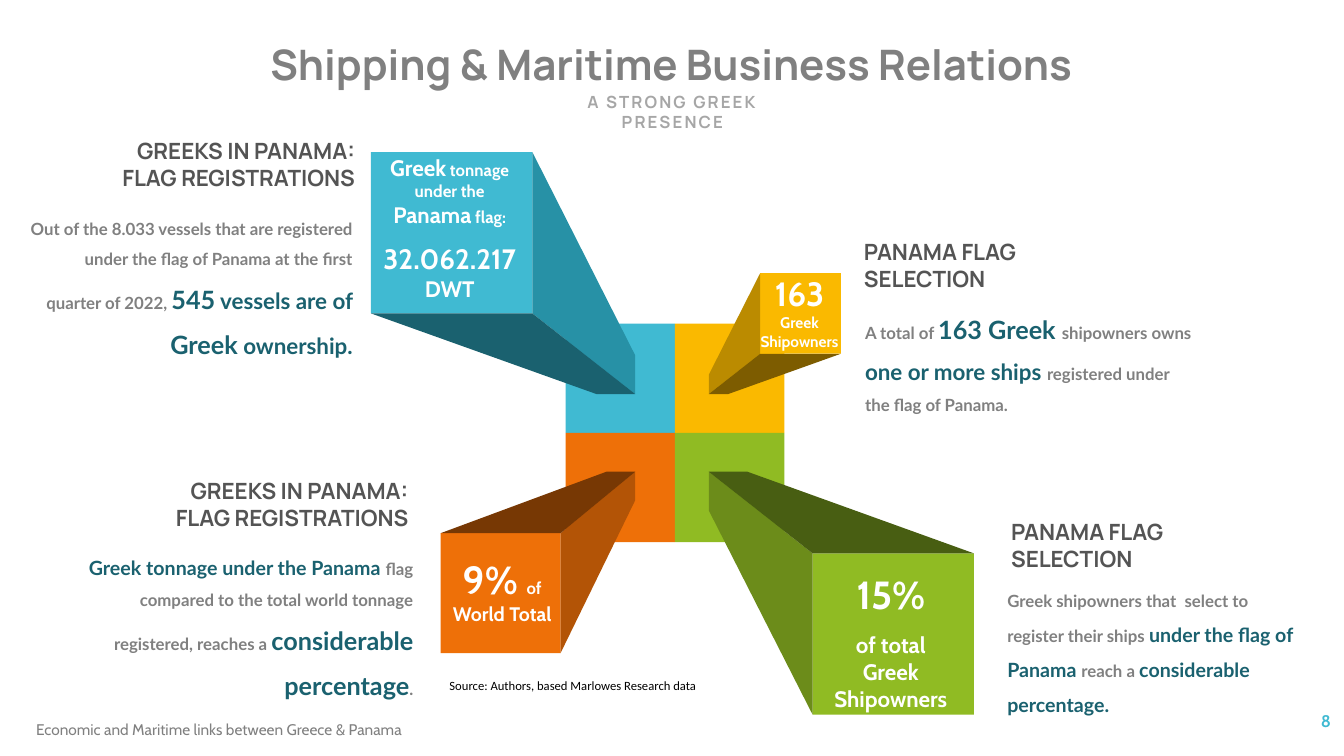
"""Build the slide on shipping and maritime business relations."""
from pptx import Presentation
from pptx.dml.color import RGBColor
from pptx.enum import shapes, text
from pptx.util import Inches, Pt

COLORS = {
    "blue": "40BAD2", "blue side": "2791A6", "blue base": "1A616F",
    "yellow": "FAB900", "yellow side": "BB8B00", "yellow base": "7D5C00",
    "orange": "EE7008", "orange side": "B35406", "orange base": "773804",
    "green": "90BB23", "green side": "6C8C1A", "green base": "485E12",
    "heading": "545454", "gray": "808080", "pale": "A6A6A6",
    "teal": "1A616F", "white": "FFFFFF", "black": "000000",
}
LEFT, CENTER, RIGHT = text.PP_ALIGN.LEFT, text.PP_ALIGN.CENTER, text.PP_ALIGN.RIGHT
TOP, MIDDLE = text.MSO_ANCHOR.TOP, text.MSO_ANCHOR.MIDDLE


def paint(shape, color):
    """Give a shape a plain fill with no line or shadow."""
    shape.shadow.inherit = False
    shape.fill.solid()
    shape.fill.fore_color.rgb = RGBColor.from_string(COLORS[color])
    shape.line.fill.background()


def write(box, paras, font, align=LEFT, anchor=TOP, inset=(0.1, 0.05), bold=True,
          spacing=1.0, before=(0,)):
    """Fill a box with paragraphs of (text, size, color) runs."""
    frame = box.text_frame
    frame.word_wrap = True
    frame.auto_size = text.MSO_AUTO_SIZE.NONE
    frame.vertical_anchor = anchor
    frame.margin_left = frame.margin_right = Inches(inset[0])
    frame.margin_top = frame.margin_bottom = Inches(inset[1])
    for index, runs in enumerate(paras):
        para = frame.add_paragraph() if index else frame.paragraphs[0]
        para.alignment = align
        para.line_spacing = spacing
        para.space_before = Pt(before[index] if index < len(before) else 0)
        for words, size, color in runs:
            span = para.add_run()
            span.text = words
            span.font.size = Pt(size)
            span.font.name = font
            span.font.bold = bold
            span.font.color.rgb = RGBColor.from_string(COLORS[color])


deck = Presentation()
deck.slide_width, deck.slide_height = Inches(13.33), Inches(7.5)
page = deck.slides.add_slide(deck.slide_layouts[5])

title = page.shapes.title
title.left, title.top, title.width, title.height = map(Inches, (2.28, 0.33, 8.76, 0.61))
write(title, [[("Shipping & Maritime Business Relations", 30, "gray")]], "Manrope", CENTER)

subtitle = page.shapes.add_textbox(*map(Inches, (5.57, 0.86, 2.2, 0.5)))
write(subtitle, [[("A STRONG GREEK PRESENCE", 12, "pale")]], "Manrope", CENTER)
for span in subtitle.text_frame.paragraphs[0].runs:
    span.font._element.set("spc", "150")

TILE = 1.085
CORE_LEFT, CORE_TOP = 5.61, 3.21
tiles = [("blue", 0, 0), ("yellow", 1, 0), ("orange", 0, 1), ("green", 1, 1)]
for color, column, row in tiles:
    tile = page.shapes.add_shape(
        shapes.MSO_SHAPE.RECTANGLE, Inches(CORE_LEFT + column * TILE),
        Inches(CORE_TOP + row * TILE), Inches(TILE), Inches(TILE))
    paint(tile, color)

blocks = {"yellow": (7.54, 2.71, 0.8), "orange": (4.37, 5.29, 1.19),
          "green": (8.06, 5.49, 1.6), "blue": (3.68, 1.51, 1.6)}
places = {color: (column, row) for color, column, row in tiles}
for color, (left, top, size) in blocks.items():
    column, row = places[color]
    near_x, far_x = (left, left + size) if column else (left + size, left)
    near_y, far_y = (top, top + size) if row else (top + size, top)
    tip_x, tip_y = (6.3, 7.03)[column], (3.91, 4.68)[row]
    depth = 0.24 * size
    back_x = tip_x + depth * (2 * column - 1)
    back_y = tip_y + depth * (2 * row - 1)
    faces = {
        "side": [(near_x, far_y), (tip_x, back_y), (tip_x, tip_y), (near_x, near_y)],
        "base": [(near_x, near_y), (tip_x, tip_y), (back_x, tip_y), (far_x, near_y)],
    }
    front = page.shapes.add_shape(
        shapes.MSO_SHAPE.RECTANGLE, *map(Inches, (left, top, size, size)))
    paint(front, color)
    for face, points in faces.items():
        corners = [(Inches(x), Inches(y)) for x, y in points]
        builder = page.shapes.build_freeform(*corners[0])
        builder.add_line_segments(corners[1:], close=True)
        paint(builder.convert_to_shape(), f"{color} {face}")

headings = [
    ((9.93, 5.09, 1.87, 0.64), LEFT, "PANAMA FLAG", "SELECTION"),
    ((8.47, 2.31, 1.87, 0.64), LEFT, "PANAMA FLAG", "SELECTION"),
    ((1.46, 4.68, 2.69, 0.64), RIGHT, "GREEKS IN PANAMA:", "FLAG REGISTRATIONS"),
    ((0.93, 1.31, 2.69, 0.64), RIGHT, "GREEKS IN PANAMA:", "FLAG REGISTRATIONS"),
]
for place, align, *lines in headings:
    box = page.shapes.add_textbox(*map(Inches, place))
    write(box, [[(line, 16, "heading")] for line in lines], "Manrope", align, MIDDLE)

stories = [
    ((9.94, 5.73, 3.09, 1.01), LEFT, [
        ("Greek shipowners that  select to register their ships ", 12, "gray"),
        ("under the flag of Panama ", 14, "teal"), ("reach a ", 12, "gray"),
        ("considerable percentage.", 14, "teal")]),
    ((8.53, 2.94, 3.35, 1.17), LEFT, [
        ("A total of ", 12, "gray"), ("163 Greek ", 18, "teal"),
        ("shipowners owns ", 12, "gray"), ("one or more ships ", 16, "teal"),
        ("registered under the flag of Panama.", 12, "gray")]),
    ((0.53, 5.37, 3.62, 1.1), RIGHT, [
        ("Greek tonnage under the Panama ", 14, "teal"),
        ("flag compared to the total world tonnage registered, reaches a ", 12, "gray"),
        ("considerable", 18, "teal"), (" ", 16, "teal"), ("percentage", 18, "teal"),
        (".", 12, "gray")]),
    ((0.22, 2.04, 3.33, 1.46), RIGHT, [
        ("Out of the 8.033 vessels that are registered under the flag of Panama "
         "at the first quarter of 2022, ", 12, "gray"),
        ("545", 18, "teal"), (" vessels are of ", 16, "teal"),
        ("Greek", 18, "teal"), (" ownership.", 16, "teal")]),
]
for place, align, runs in stories:
    box = page.shapes.add_textbox(*map(Inches, place))
    write(box, [runs], "Lato", align, inset=(0.05, 0.03), spacing=1.5, before=(3,))

figures = [
    ((3.67, 1.48, 1.58, 1.58), (0, 9.6), [
        [("Greek", 16, "white"), (" tonnage under the ", 12, "white"),
         ("Panama", 16, "white"), (" flag:", 12, "white")],
        [("32.062.217", 20, "white")], [("DWT", 16, "white")]]),
    ((4.39, 5.46, 1.18, 0.81), (0,), [
        [("9% ", 28, "white"), ("of", 12, "white"), (" ", 16, "white"),
         ("World Total", 14, "white")]]),
    ((7.42, 2.66, 1.02, 0.88), (0,), [
        [("163", 24, "white")], [("Greek Shipowners", 11, "white")]]),
    ((8.14, 5.61, 1.39, 1.51), (0, 9.6), [
        [("15%", 28, "white")], [("of total", 16, "white")],
        [("Greek Shipowners", 16, "white")]]),
]
for place, before, paras in figures:
    box = page.shapes.add_textbox(*map(Inches, place))
    write(box, paras, "Cabin", CENTER, before=before)

notes = [
    ((0.26, 7.04, 6.46, 0.4), "Economic and Maritime links between Greece & Panama",
     11, "gray", "Cabin", LEFT, MIDDLE, False),
    ((11.63, 6.95, 1.67, 0.4), "8", 12, "blue", "Cabin", RIGHT, MIDDLE, True),
    ((4.36, 6.68, 2.8, 0.25), "Source: Authors, based Marlowes Research data",
     9, "black", "Calibri", LEFT, TOP, False),
]
for place, words, size, color, font, align, anchor, bold in notes:
    box = page.shapes.add_textbox(*map(Inches, place))
    write(box, [[(words, size, color)]], font, align, anchor, bold=bold)

deck.save("out.pptx")
